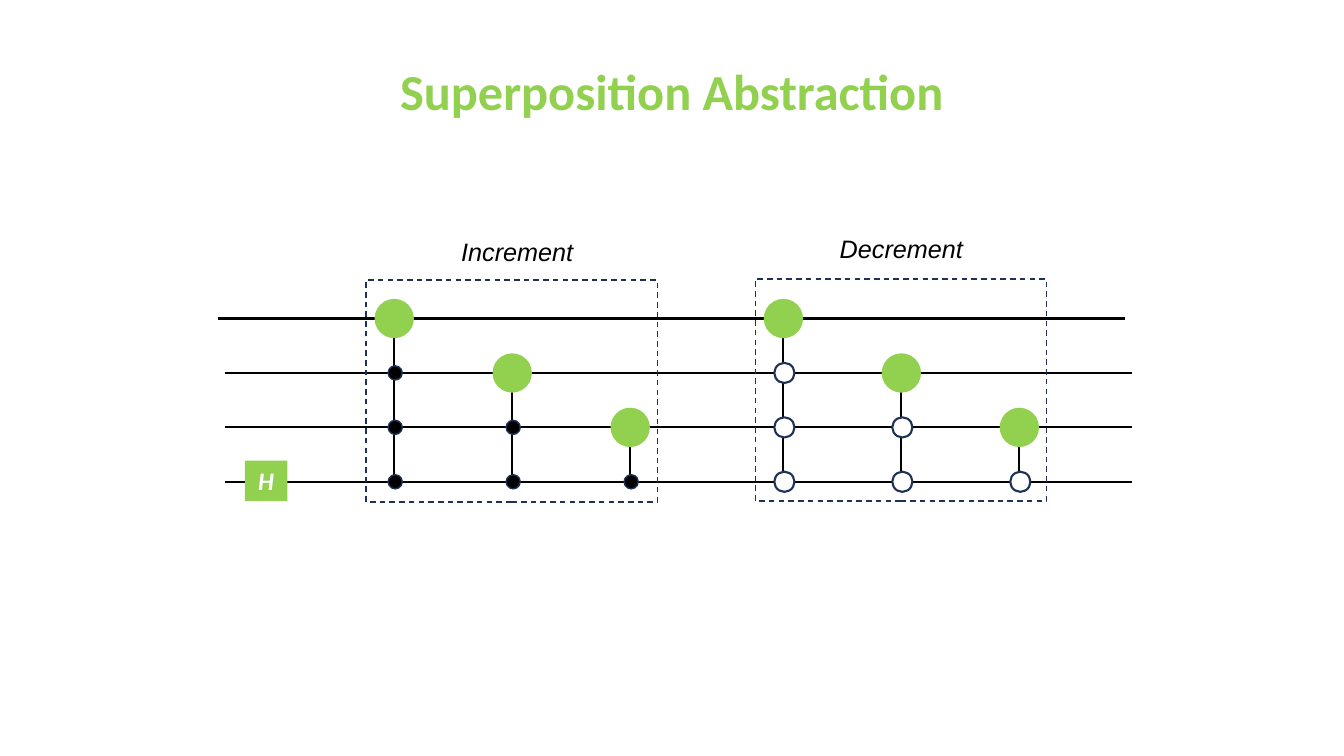
from pptx import Presentation
from pptx import util as u
from pptx.dml.color import RGBColor
from pptx.enum import dml, shapes, text
from pptx.oxml.ns import qn
from lxml import etree

GREEN, NAVY, BLACK, WHITE = "92D050", "1E3256", "000000", "FFFFFF"


def rgb(value):
    return RGBColor.from_string(value)


class Circuit:
    """Holds the slide and the wire layout, and draws each kind of element."""

    wires = [3.16 + 0.54 * i for i in range(4)]
    step = 1.17
    target_size = 0.39

    def __init__(self, slide):
        self.slide = slide

    def line(self, x1, y1, x2, y2):
        c = self.slide.shapes.add_connector(
            shapes.MSO_CONNECTOR.STRAIGHT,
            u.Inches(x1), u.Inches(y1), u.Inches(x2), u.Inches(y2))
        c.line.color.rgb = rgb(BLACK)
        c.line.width = u.Pt(1.5)
        etree.SubElement(c._element.spPr, qn("a:effectLst"))

    def shape(self, kind, x, y, w, h, fill=None, width=None, dash=False):
        sp = self.slide.shapes.add_shape(
            kind, u.Inches(x), u.Inches(y), u.Inches(w), u.Inches(h))
        sp.shadow.inherit = False
        if fill:
            sp.fill.solid()
            sp.fill.fore_color.rgb = rgb(fill)
        else:
            sp.fill.background()
        if width:
            sp.line.color.rgb = rgb(NAVY)
            sp.line.width = u.Pt(width)
            if dash:
                sp.line.dash_style = dml.MSO_LINE.DASH
        else:
            sp.line.fill.background()
        return sp

    def circle(self, cx, cy, size, fill, width=None):
        self.shape(shapes.MSO_SHAPE.OVAL, cx - size / 2, cy - size / 2,
                   size, size, fill, width)

    def set_text(self, sp, words, size, font, color, bold=False, italic=False):
        tf = sp.text_frame
        tf.text = words
        p = tf.paragraphs[0]
        p.alignment = text.PP_ALIGN.CENTER
        r = p.runs[0]
        r.font.size = u.Pt(size)
        r.font.name = font
        r.font.color.rgb = rgb(color)
        r.font.bold = bold
        r.font.italic = italic

    def label(self, x, y, w, h, words, *style, **flags):
        sp = self.slide.shapes.add_textbox(
            u.Inches(x), u.Inches(y), u.Inches(w), u.Inches(h))
        sp.text_frame.word_wrap = False
        self.set_text(sp, words, *style, **flags)

    def gate(self, x, row, size, fill, width):
        """Target on one wire, controlled by every wire below it."""
        self.line(x, self.wires[row], x, self.wires[-1])
        for y in self.wires[row + 1:]:
            self.circle(x + 0.01, y, size, fill, width)
        self.circle(x, self.wires[row], self.target_size, GREEN)

    def block(self, x, top, *control):
        for row in range(3):
            self.gate(x + row * self.step, row, *control)
        self.shape(shapes.MSO_SHAPE.RECTANGLE, x - 0.28, top, 2.89, 2.2,
                   width=1, dash=True)


def main():
    prs = Presentation()
    prs.slide_width, prs.slide_height = u.Inches(13.33), u.Inches(7.5)
    s = Circuit(prs.slides.add_slide(prs.slide_layouts[6]))

    # Title
    s.label(3.72, 0.55, 5.89, 0.71, "Superposition Abstraction",
            36, "Calibri", GREEN, bold=True)

    # Wires
    for i, y in enumerate(s.wires):
        x = 2.23 if i else 2.16
        s.line(x, y, x + 9, y)

    # Hadamard gate
    sp = s.shape(shapes.MSO_SHAPE.RECTANGLE, 2.43, 4.57, 0.42, 0.4, GREEN)
    s.set_text(sp, "H", 18, "Calibri", WHITE, bold=True, italic=True)
    sp.text_frame.vertical_anchor = text.MSO_ANCHOR.MIDDLE

    # Filled controls increment, open controls decrement
    s.block(3.91, 2.78, 0.14, BLACK, 1)
    s.block(7.77, 2.77, 0.2, WHITE, 1.5)

    # Block names
    s.label(4.47, 2.3, 1.32, 0.4, "Increment", 18, "Arial", BLACK, italic=True)
    s.label(8.22, 2.27, 1.44, 0.4, "Decrement", 18, "Arial", BLACK, italic=True)

    prs.save("out.pptx")


if __name__ == "__main__":
    main()
